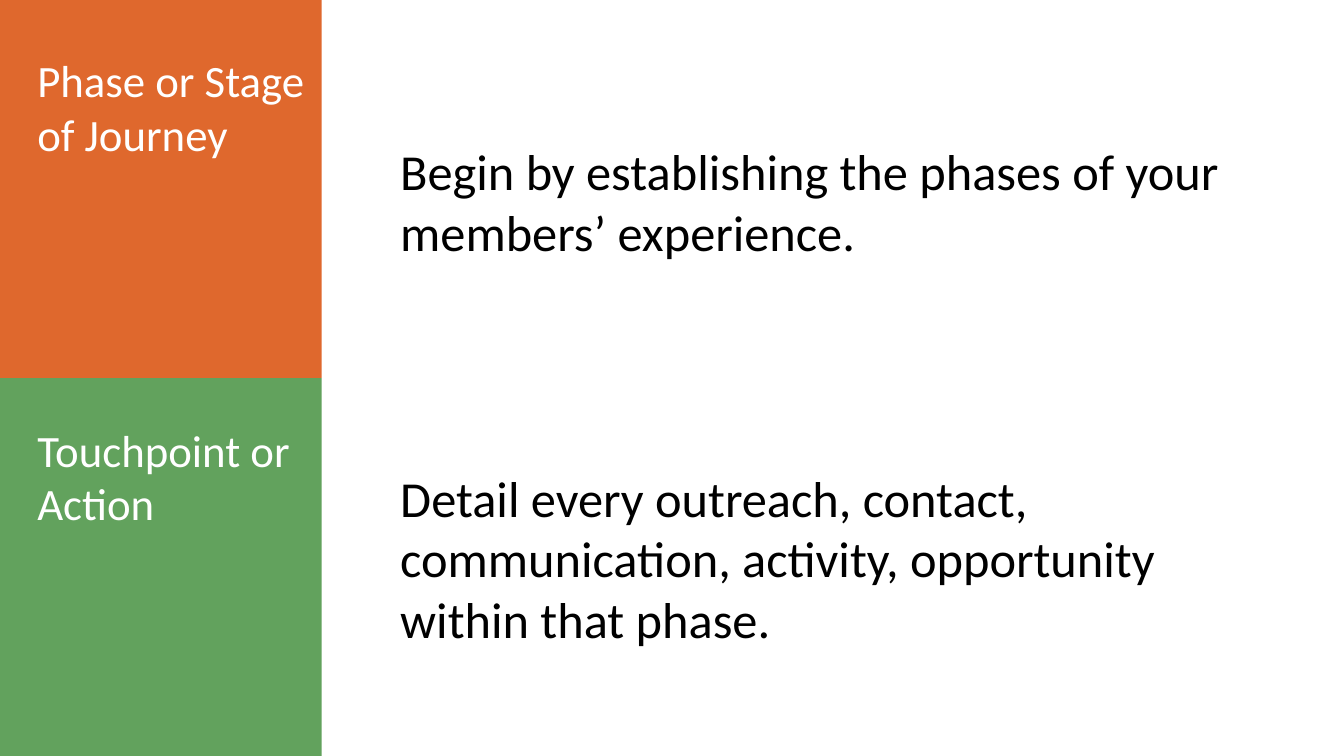
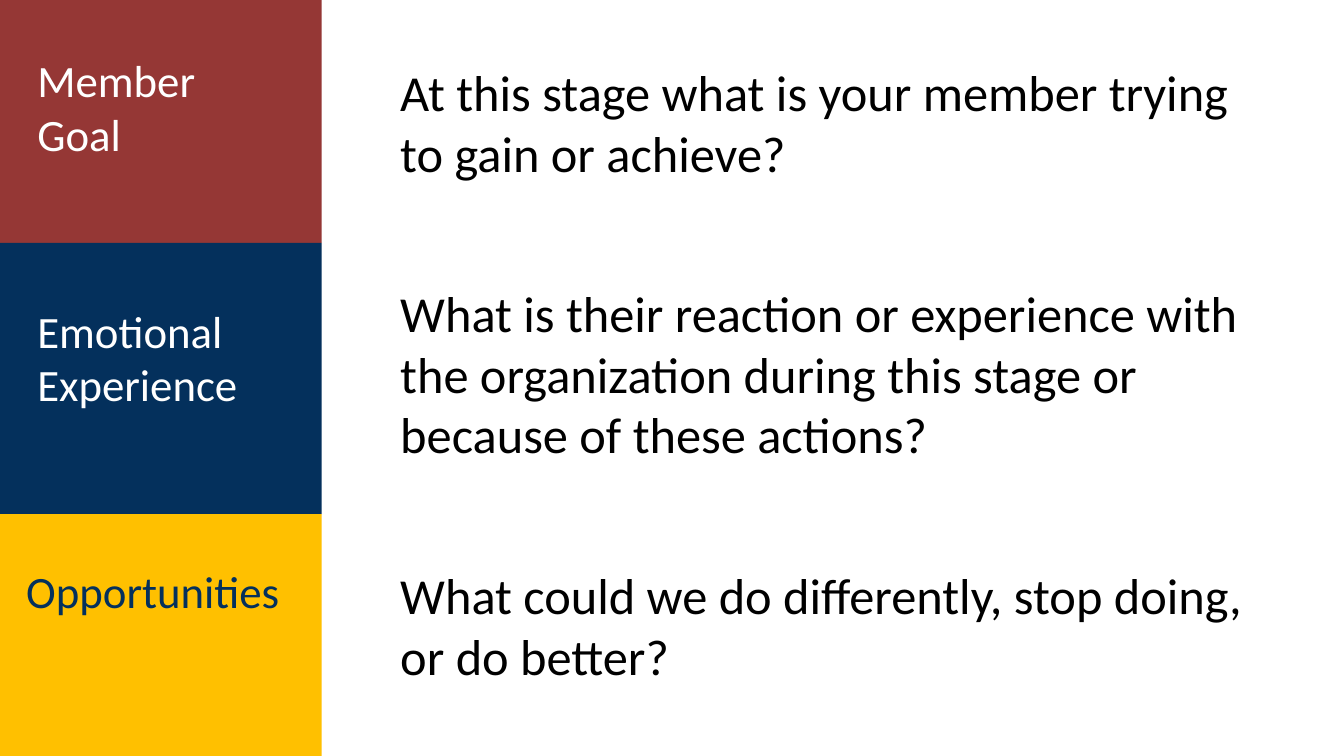
from pptx import Presentation
from pptx.dml.color import RGBColor
from pptx.enum.shapes import MSO_SHAPE
from pptx.enum.text import MSO_ANCHOR, MSO_AUTO_SIZE, PP_ALIGN
from pptx.util import Inches, Pt


def rgb(value):
    return RGBColor.from_string(value)


class Deck:
    FONT = "Calibri"
    WHITE, BLACK, NAVY = "FFFFFF", "000000", "04305C"
    ORANGE, GREEN, RED, YELLOW = "DF682D", "62A25D", "953735", "FFC000"
    BAND_W = 3.19
    LABEL_X, LABEL_W, LABEL_SIZE = 0.37, 2.82, 32
    PROMPT_X, PROMPT_W, PROMPT_SIZE = 3.97, 8.37, 36

    def __init__(self):
        self.prs = Presentation()
        self.prs.slide_width = Inches(13.33)
        self.prs.slide_height = Inches(7.5)
        self.s = None

    def add_slide(self):
        self.s = self.prs.slides.add_slide(self.prs.slide_layouts[5])
        self.s.background.fill.solid()
        self.s.background.fill.fore_color.rgb = rgb(self.WHITE)

    def band(self, top, bottom, color):
        sp = self.s.shapes.add_shape(
            MSO_SHAPE.RECTANGLE, 0, Inches(top), Inches(self.BAND_W), Inches(bottom - top))
        sp.shadow.inherit = False
        sp.fill.solid()
        sp.fill.fore_color.rgb = rgb(color)
        sp.line.fill.background()

    def set_text(self, sp, box, lines, size, color):
        sp.left, sp.top, sp.width, sp.height = [Inches(v) for v in box]
        tf = sp.text_frame
        tf.word_wrap = True
        tf.auto_size = MSO_AUTO_SIZE.NONE
        tf.vertical_anchor = MSO_ANCHOR.TOP
        tf.margin_left = tf.margin_top = tf.margin_right = tf.margin_bottom = 0
        for i, line in enumerate(lines):
            p = tf.add_paragraph() if i else tf.paragraphs[0]
            p.alignment = PP_ALIGN.LEFT
            r = p.add_run()
            r.text = line
            r.font.name = self.FONT
            r.font.size = Pt(size)
            r.font.color.rgb = rgb(color)

    def text(self, box, lines, size, color):
        self.set_text(self.s.shapes.add_textbox(0, 0, 0, 0), box, lines, size, color)

    def title(self, box, lines, size, color):
        sp = self.s.shapes.title
        sp.element.getparent().append(sp.element)
        self.set_text(sp, box, lines, size, color)

    def label(self, top, lines, color=WHITE, left=LABEL_X, is_title=False):
        add = self.title if is_title else self.text
        add((left, top, self.LABEL_W, 1.08), lines, self.LABEL_SIZE, color)

    def prompt(self, top, height, line):
        self.text((self.PROMPT_X, top, self.PROMPT_W, height), [line],
                  self.PROMPT_SIZE, self.BLACK)

    def bands(self, edges, colors):
        for top, bottom, color in zip(edges, edges[1:], colors):
            self.band(top, bottom, color)


def main():
    deck = Deck()

    deck.add_slide()
    deck.bands([0, 3.75, 7.5], [deck.ORANGE, deck.GREEN])
    deck.label(0.52, ["Phase or Stage of Journey"], is_title=True)
    deck.label(4.19, ["Touchpoint or Action"])
    deck.prompt(1.39, 1.21, "Begin by establishing the phases of your members’ experience.")
    deck.prompt(4.63, 1.82, "Detail every outreach, contact, communication, activity, "
                            "opportunity within that phase.")

    deck.add_slide()
    deck.bands([0, 2.41, 5.1, 7.5], [deck.RED, deck.NAVY, deck.YELLOW])
    deck.label(0.52, ["Member", "Goal"], is_title=True)
    deck.label(3.01, ["Emotional Experience"])
    deck.label(5.59, ["Opportunities"], color=deck.NAVY, left=0.26)
    deck.prompt(0.61, 1.21, "At this stage what is your member trying to gain or achieve?")
    deck.prompt(2.8, 1.82, "What is their reaction or experience with the organization "
                           "during this stage or because of these actions?")
    deck.prompt(5.6, 1.21, "What could we do differently, stop doing, or do better?")

    deck.prs.save("out.pptx")


if __name__ == "__main__":
    main()
